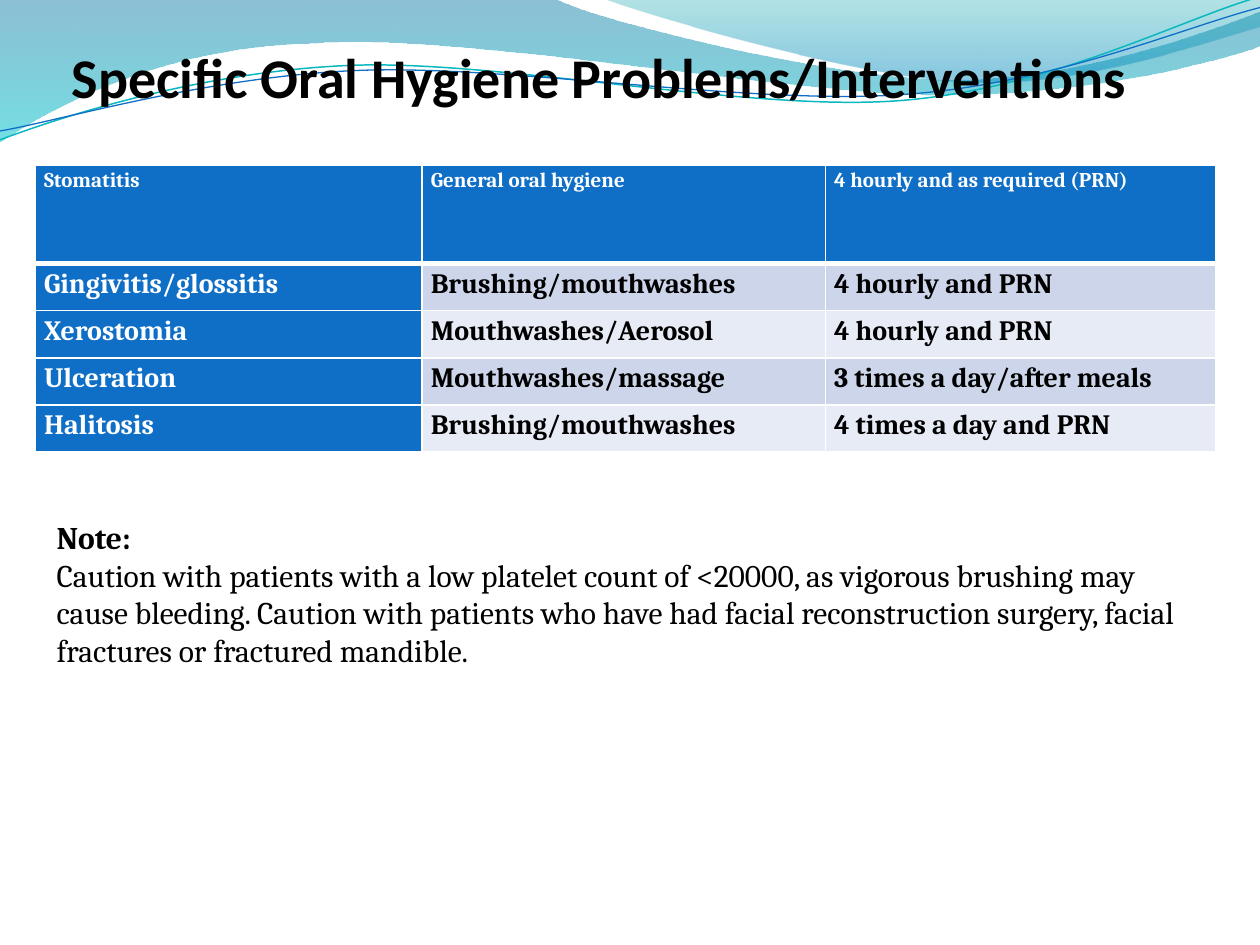
from lxml.etree import SubElement
from pptx import Presentation
from pptx.dml.color import RGBColor
from pptx.enum.text import MSO_ANCHOR as Anchor, MSO_AUTO_SIZE as AutoSize, PP_ALIGN as Align
from pptx.oxml.ns import qn
from pptx.util import Inches, Pt

BLUE, WHITE, BLACK = "0F6FC6", "FFFFFF", "000000"
BANDS = ["CCD5EA", "E7EBF5"]

LARGE_WAVE = [
    [(0, 0)], [(4.4, -0.01)],
    [(4.76, 0.17), (6.64, 0.63), (7.58, 0.63)],
    [(8.53, 0.63), (9.58, 0.26), (10, 0.09)],
    [(10.01, 0.36)],
    [(9.83, 0.44), (8.7, 0.76), (7.46, 0.75)],
    [(6.22, 0.75), (3.82, 0.28), (2.57, 0.34)],
    [(1.29, 0.36), (0.46, 0.83), (-0.01, 1.13)],
    [(0, 0)],
]
SMALL_WAVE = [
    [(4.79, -0.01)],
    [(5.09, 0.11), (6.82, 0.62), (7.69, 0.65)],
    [(8.56, 0.69), (9.61, 0.32), (10, 0.21)],
    [(10, 0)], [(4.79, -0.01)],
]
TEAL_STRAND = [
    [(0, 1.11)],
    [(0.48, 0.93), (1.58, 0.57), (2.77, 0.52)],
    [(3.95, 0.47), (5.93, 0.89), (7.13, 0.8)],
    [(8.33, 0.71), (9.38, 0.15), (9.98, -0.02)],
]
BLUE_STRAND = [
    [(0, 1.04)],
    [(0.47, 0.96), (1.64, 0.61), (2.83, 0.56)],
    [(4.03, 0.51), (5.97, 0.84), (7.17, 0.75)],
    [(8.36, 0.67), (9.41, 0.21), (10, 0.06)],
]
ROWS = [
    ["Stomatitis", "General oral hygiene", "4 hourly and as required (PRN)"],
    ["Gingivitis/glossitis", "Brushing/mouthwashes", "4 hourly and PRN"],
    ["Xerostomia", "Mouthwashes/Aerosol", "4 hourly and PRN"],
    ["Ulceration", "Mouthwashes/massage", "3 times a day/after meals"],
    ["Halitosis", "Brushing/mouthwashes", "4 times a day and PRN"],
]
HEADER_HEIGHT = 0.78
NOTE = (
    "Caution with patients with a low platelet count of <20000, as vigorous "
    "brushing may cause bleeding. Caution with patients who have had facial "
    "reconstruction surgery, facial fractures or fractured mandible."
)


def color(value):
    return RGBColor.from_string(value)


def style(para, name, size, value, bold=True):
    para.font.name = name
    para.font.size = Pt(size)
    para.font.bold = bold
    para.font.color.rgb = color(value)


def bend(shape, segments):
    lines = shape._element.spPr.iter(qn("a:lnTo"))
    remaining = iter(list(lines))
    for segment in segments[1:]:
        first, *others = [next(remaining) for point in segment]
        if not others:
            continue
        curve = first.makeelement(qn("a:cubicBezTo"))
        first.addprevious(curve)
        for line in [first, *others]:
            curve.append(line[0])
            line.getparent().remove(line)


def add_outline(page, segments, box, close):
    left, top = box
    points = [
        (Inches(left + x), Inches(top + y)) for segment in segments for x, y in segment
    ]
    builder = page.shapes.build_freeform(*points[0])
    builder.add_line_segments(points[1:], close=close)
    shape = builder.convert_to_shape()
    bend(shape, segments)
    shape.shadow.inherit = False
    return shape


def add_wave(page, segments, box, stops):
    shape = add_outline(page, segments, box, True)
    shape.line.fill.background()
    shape.fill.gradient()
    shape.fill.gradient_angle = 270
    for stop, (position, value, opacity) in zip(shape.fill.gradient_stops, stops):
        stop.position = position
        stop.color.rgb = color(value)
    tones = shape._element.spPr.iter(qn("a:srgbClr"))
    for tone, (position, value, opacity) in zip(tones, stops):
        SubElement(tone, qn("a:alpha"), val=str(opacity * 1000))


def add_strand(page, segments, box, value, width):
    shape = add_outline(page, segments, box, False)
    shape.fill.background()
    shape.line.color.rgb = color(value)
    shape.line.width = Pt(width)


def add_banner(page, box):
    add_wave(page, LARGE_WAVE, box, [(0, "0074A1", 45), (1, "00C6CF", 55)])
    add_wave(page, SMALL_WAVE, box, [(0, "00A1A9", 30), (0.8, "008BBF", 45)])
    add_strand(page, TEAL_STRAND, box, "0AB8BF", 0.85)
    add_strand(page, BLUE_STRAND, box, BLUE, 0.75)


def place_title(page, box):
    title = page.shapes.title
    title.left, title.top, title.width, title.height = map(Inches, box)
    frame = title.text_frame
    frame.text = "Specific Oral Hygiene Problems/Interventions"
    frame.auto_size = AutoSize.NONE
    frame.vertical_anchor = Anchor.TOP
    frame.paragraphs[0].alignment = Align.LEFT
    style(frame.paragraphs[0], "Calibri", 32, BLACK)
    page.shapes._spTree.append(title._element)


def add_borders(cell, top, bottom):
    properties = cell._tc.get_or_add_tcPr()
    for side, width in [("L", 1), ("R", 1), ("T", top), ("B", bottom)]:
        line = SubElement(properties, qn(f"a:ln{side}"), w=str(Pt(width)))
        SubElement(SubElement(line, qn("a:solidFill")), qn("a:srgbClr"), val=WHITE)


def add_care_table(page, box):
    frame = page.shapes.add_table(len(ROWS), len(ROWS[0]), *map(Inches, box))
    table = frame.table
    body_height = (box[3] - HEADER_HEIGHT) / (len(ROWS) - 1)
    for column, width in zip(table.columns, [3.07, 3.2, 3.1]):
        column.width = Inches(width)
    for row, texts in enumerate(ROWS):
        table.rows[row].height = Inches(body_height if row else HEADER_HEIGHT)
        for column, text in enumerate(texts):
            cell = table.cell(row, column)
            heading = row == 0 or column == 0
            add_borders(cell, 3 if row == 1 else 1, 1 if row else 3)
            cell.fill.solid()
            cell.fill.fore_color.rgb = color(BLUE if heading else BANDS[(row - 1) % 2])
            cell.margin_left = cell.margin_right = Inches(0.07)
            cell.margin_top = cell.margin_bottom = 0
            cell.text = text
            para = cell.text_frame.paragraphs[0]
            para.alignment = Align.LEFT if column == 2 else Align.JUSTIFY
            para.line_spacing = 1.15
            style(para, "Cambria", 16 if row else 12, WHITE if heading else BLACK)


def add_note(page, box):
    frame = page.shapes.add_textbox(*map(Inches, box)).text_frame
    frame.word_wrap = True
    frame.auto_size = AutoSize.SHAPE_TO_FIT_TEXT
    frame.text = f"Note:\n{NOTE}"
    for para, bold in zip(frame.paragraphs, [True, False]):
        style(para, "Cambria", 18, BLACK, bold)


def main():
    deck = Presentation()
    deck.slide_width, deck.slide_height = Inches(10), Inches(7.5)
    page = deck.slides.add_slide(deck.slide_layouts[5])
    add_banner(page, (0, 0))
    add_care_table(page, (0.28, 1.31, 9.37, 2.28))
    place_title(page, (0.47, 0.29, 8.65, 0.94))
    add_note(page, (0.35, 4.06, 9.29, 1.31))
    deck.save("out.pptx")


if __name__ == "__main__":
    main()
